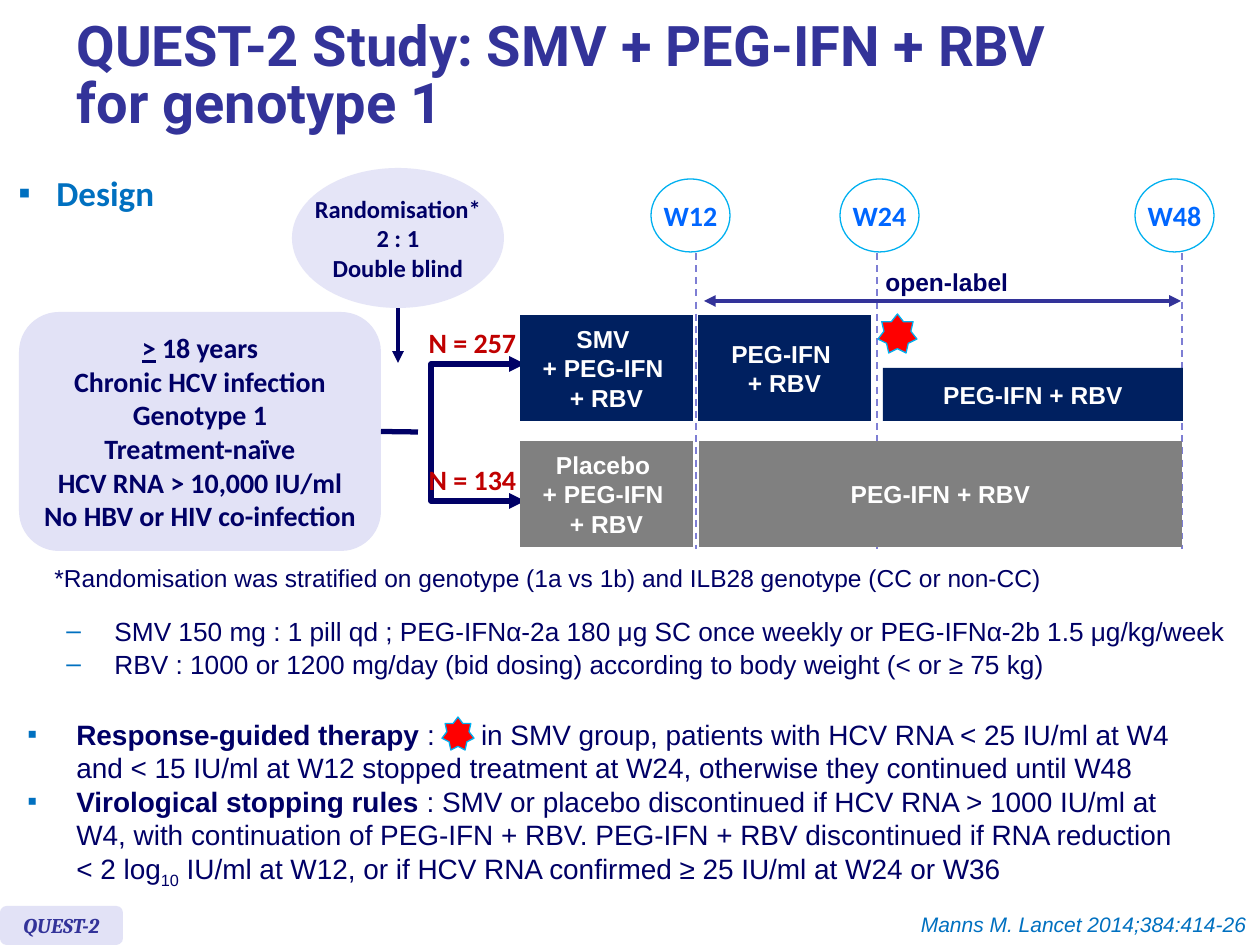
from lxml.etree import SubElement
from pptx import Presentation
from pptx.dml.color import RGBColor
from pptx.enum.dml import MSO_LINE
from pptx.enum.shapes import MSO_CONNECTOR, MSO_SHAPE
from pptx.enum.text import MSO_ANCHOR, PP_ALIGN
from pptx.oxml.ns import qn
from pptx.util import Inches, Pt

PX = Inches(1) / 126

NAVY = RGBColor(0x00, 0x00, 0x66)
INDIGO = RGBColor(0x33, 0x33, 0x99)
BLUE = RGBColor(0x00, 0x70, 0xC0)
BRIGHT_BLUE = RGBColor(0x00, 0x66, 0xFF)
SKY = RGBColor(0x00, 0xB0, 0xF0)
DARK_BAR = RGBColor(0x00, 0x20, 0x60)
GREY_BAR = RGBColor(0x80, 0x80, 0x80)
LAVENDER = RGBColor(0xE2, 0xE2, 0xF6)
PALE_LAVENDER = RGBColor(0xE5, 0xE5, 0xF7)
DASH_VIOLET = RGBColor(0x7E, 0x7E, 0xD4)
CRIMSON = RGBColor(0xC0, 0x00, 0x00)
RED = RGBColor(0xFF, 0x00, 0x00)
WHITE = RGBColor(0xFF, 0xFF, 0xFF)

BAR_LEFT, BAR_WIDTH, BAR_HEIGHT = 520, 173, 106
SMV_TOP, PLACEBO_TOP = 315, 441
WEEKS = (("W12", 651, 696), ("W24", 840, 877), ("W48", 1135, 1182))


def emu(*lengths):
    return [round(length * PX) for length in lengths]


def set_bullet(paragraph, character, indent):
    properties = paragraph._p.get_or_add_pPr()
    margin = emu(indent)[0]
    properties.set("marL", str(margin))
    properties.set("indent", str(-margin))
    color = SubElement(properties, qn("a:buClr"))
    SubElement(color, qn("a:srgbClr")).set("val", str(BLUE))
    SubElement(properties, qn("a:buFont")).set("typeface", "Arial")
    SubElement(properties, qn("a:buChar")).set("char", character)


def add_run(paragraph, text, size, font, color, bold=False, italic=False,
            underline=False, baseline=0, spacing=0):
    """Add text in one format; each newline becomes a line break."""
    for index, line in enumerate(text.split("\n")):
        if index:
            paragraph.add_line_break()
        run = paragraph.add_run()
        run.text = line
        run.font.size = Pt(size)
        run.font.name = font
        run.font.color.rgb = color
        run.font.bold = bold
        run.font.italic = italic
        run.font.underline = underline
        for name, value in (("baseline", baseline), ("spc", spacing)):
            if value:
                run._r.get_or_add_rPr().set(name, str(value))


def write(shape, paragraphs, style, align=PP_ALIGN.CENTER, anchor=MSO_ANCHOR.MIDDLE,
          wrap=False, bullet=None, space_before=0, line_spacing=None):
    """Fill a shape; a paragraph is a string or a list of (text, style changes)."""
    frame = shape.text_frame
    frame.word_wrap = wrap
    frame.vertical_anchor = anchor
    for index, runs in enumerate(paragraphs):
        paragraph = frame.add_paragraph() if index else frame.paragraphs[0]
        paragraph.alignment = align
        if line_spacing:
            paragraph.line_spacing = line_spacing
        if index and space_before:
            paragraph.space_before = Pt(space_before)
        if bullet:
            set_bullet(paragraph, *bullet)
        for text, changes in [(runs, {})] if isinstance(runs, str) else runs:
            add_run(paragraph, text, **{**style, **changes})


def text_style(size, font, color, **more):
    return dict(size=size, font=font, color=color, **more)


def add_text(slide, box, paragraphs, style, align=PP_ALIGN.LEFT,
             anchor=MSO_ANCHOR.TOP, **options):
    shape = slide.shapes.add_textbox(*emu(*box))
    write(shape, paragraphs, style, align, anchor, **options)


def add_filled(slide, kind, box, fill, outline=None):
    shape = slide.shapes.add_shape(kind, *emu(*box))
    shape.shadow.inherit = False
    shape.fill.solid()
    shape.fill.fore_color.rgb = fill
    if outline is None:
        shape.line.fill.background()
    else:
        shape.line.color.rgb = outline
        shape.line.width = Pt(0.75)
    return shape


def add_bar(slide, box, fill, text):
    bar = add_filled(slide, MSO_SHAPE.RECTANGLE, box, fill)
    write(bar, [text], text_style(14, "Arial", WHITE, bold=True))


def style_line(shape, color, width, ends=()):
    """Colour a line and put arrowheads on the named ends."""
    shape.line.color.rgb = color
    shape.line.width = Pt(width)
    for end in ends:
        SubElement(shape.line._get_or_add_ln(), qn("a:" + end)).set("type", "triangle")


def add_line(slide, points, color, width, ends=(), dashed=False):
    line = slide.shapes.add_connector(MSO_CONNECTOR.STRAIGHT, *emu(*points))
    if dashed:
        line.line.dash_style = MSO_LINE.DASH
    style_line(line, color, width, ends)
    SubElement(line._element.spPr, qn("a:effectLst"))
    return line


def add_arm_split(slide):
    """Draw the two-headed fork that leads to the treatment arms."""
    left, right, top, bottom = emu(431, 525, 364, 501)
    builder = slide.shapes.build_freeform(right, top)
    builder.add_line_segments([(left, top), (left, bottom), (right, bottom)], close=False)
    fork = builder.convert_to_shape()
    fork.shadow.inherit = False
    fork.fill.background()
    style_line(fork, NAVY, 3, ("headEnd", "tailEnd"))


def add_population(slide):
    box = add_filled(slide, MSO_SHAPE.ROUNDED_RECTANGLE, (19, 312, 362, 239), LAVENDER)
    write(box, [[(">", {"underline": True}), (" 18 years", {})],
                "Chronic HCV infection", "Genotype 1", "Treatment-naïve",
                "HCV RNA > 10,000 IU/ml", "No HBV or HIV co-infection"],
          text_style(16, "Calibri", NAVY, bold=True))
    stem = add_line(slide, (381, 432, 418, 432), NAVY, 3)
    stem.begin_connect(box, 3)


def add_randomisation(slide):
    add_line(slide, (398, 307, 398, 363), NAVY, 2.25, ("tailEnd",))
    ellipse = add_filled(slide, MSO_SHAPE.OVAL, (292, 168, 212, 140), PALE_LAVENDER)
    write(ellipse, ["Randomisation*", "2 : 1", "Double blind"],
          text_style(14, "Calibri", NAVY, bold=True))
    add_arm_split(slide)
    for label, top in (("N = 257", 319), ("N = 134", 456)):
        add_text(slide, (416, top, 113, 47), [label],
                 text_style(16, "Calibri", CRIMSON, bold=True), PP_ALIGN.CENTER)


def add_timeline(slide):
    for label, left, line_x in WEEKS:
        add_line(slide, (line_x, 253, line_x, 549), DASH_VIOLET, 1, dashed=True)
        circle = add_filled(slide, MSO_SHAPE.OVAL, (left, 179, 79, 73), WHITE, SKY)
        write(circle, [label], text_style(16, "Calibri", BRIGHT_BLUE, bold=True))
    for top, fill, drug in ((SMV_TOP, DARK_BAR, "SMV"), (PLACEBO_TOP, GREY_BAR, "Placebo")):
        add_bar(slide, (BAR_LEFT, top, BAR_WIDTH, BAR_HEIGHT), fill,
                drug + " \n+ PEG-IFN \n+ RBV")
    add_bar(slide, (698, SMV_TOP, BAR_WIDTH, BAR_HEIGHT), DARK_BAR, "PEG-IFN \n+ RBV")
    add_bar(slide, (883, 368, 300, 53), DARK_BAR, "PEG-IFN + RBV")
    add_bar(slide, (699, PLACEBO_TOP, 483, BAR_HEIGHT), GREY_BAR, "PEG-IFN + RBV")
    add_line(slide, (704, 301, 1181, 301), INDIGO, 2.25, ("headEnd", "tailEnd"))
    add_text(slide, (873, 261, 149, 43), ["open-label"],
             text_style(14, "Arial", NAVY, bold=True))


def add_notes_on_therapy(slide):
    add_text(slide, (42, 557, 1203, 43),
             ["*Randomisation was stratified on genotype (1a vs 1b) and ILB28 genotype "
              "(CC or non-CC)"], text_style(14, "Arial", NAVY), wrap=True)
    add_text(slide, (54, 609, 1206, 78),
             ["SMV 150 mg : 1 pill qd ; PEG-IFNα-2a 180 μg SC once weekly or "
              "PEG-IFNα-2b 1.5 μg/kg/week",
              "RBV : 1000 or 1200 mg/day (bid dosing) according to body weight (< or ≥ 75 kg)"],
             text_style(15, "Arial", NAVY), wrap=True, bullet=("–", 48), space_before=0.7)
    bold = {"bold": True}
    therapy = [("Response-guided therapy ", bold), (":", {}), (" ", {"spacing": 2200}),
               ("in SMV group, patients with HCV RNA < 25 IU/ml at W4 and < 15 IU/ml at W12 "
                "stopped treatment at W24, otherwise they continued until W48", {})]
    stopping = [("Virological stopping rules ", bold),
                (": SMV or placebo discontinued if HCV RNA > 1000 IU/ml at W4, with "
                 "continuation of PEG-IFN + RBV. PEG-IFN + RBV discontinued if RNA reduction "
                 "\n< 2 log", {}),
                ("10", {"baseline": -25000}),
                (" IU/ml at W12, or if HCV RNA confirmed ≥ 25 IU/ml at W24 or W36", {})]
    add_text(slide, (15, 711, 1207, 183), [therapy, stopping],
             text_style(16, "Arial", NAVY), wrap=True, bullet=("▪", 49))
    for star in ((878, 314, 39, 39), (442, 717, 32, 33)):
        add_filled(slide, MSO_SHAPE.STAR_7_POINT, star, RED, SKY)


def add_footer(slide):
    add_text(slide, (900, 905, 359, 38), ["Manns M. Lancet 2014;384:414-26"],
             text_style(12, "Arial", BLUE, italic=True), PP_ALIGN.RIGHT)
    tag = add_filled(slide, MSO_SHAPE.ROUNDED_RECTANGLE, (0, 906, 123, 39), LAVENDER)
    write(tag, ["QUEST-2"], text_style(12, "Cambria", INDIGO, bold=True, italic=True))


def main():
    presentation = Presentation()
    presentation.slide_width, presentation.slide_height = emu(1260, 945)
    slide = presentation.slides.add_slide(presentation.slide_layouts[6])
    add_text(slide, (64, 10, 1150, 135),
             ["QUEST-2 Study: SMV + PEG-IFN + RBV \nfor genotype 1"],
             text_style(32, "Roboto", INDIGO, bold=True),
             anchor=MSO_ANCHOR.MIDDLE, wrap=True, line_spacing=0.85)
    add_text(slide, (6, 165, 249, 79), ["Design"],
             text_style(20, "Calibri", BLUE, bold=True), wrap=True, bullet=("▪", 38))
    add_population(slide)
    add_randomisation(slide)
    add_timeline(slide)
    add_notes_on_therapy(slide)
    add_footer(slide)
    presentation.save("out.pptx")


if __name__ == "__main__":
    main()
